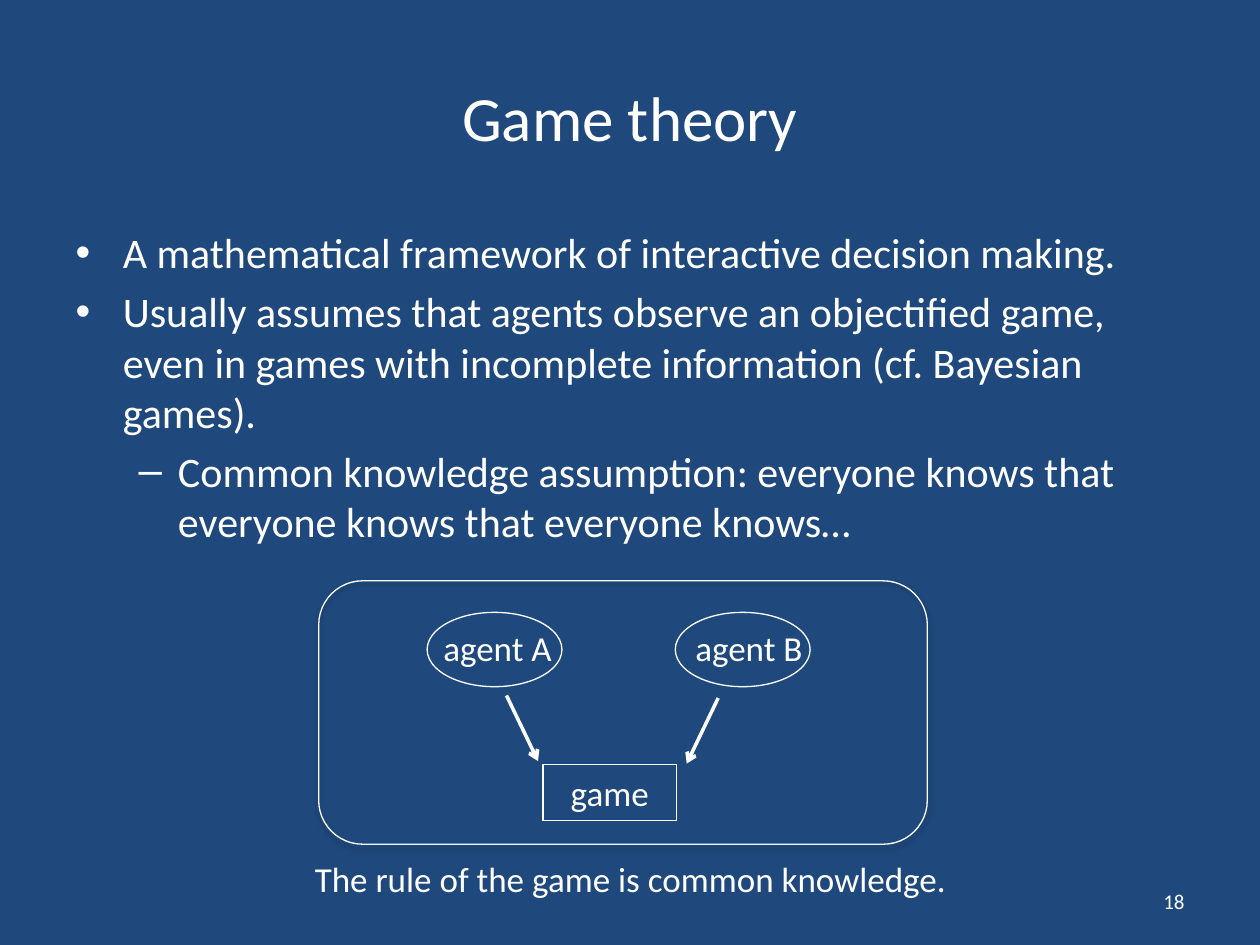
"""Build the game theory slide with its common knowledge diagram."""
from dataclasses import dataclass

from lxml.etree import SubElement
from pptx import Presentation
from pptx.dml.color import RGBColor
from pptx.enum.shapes import MSO_CONNECTOR as Conn, MSO_SHAPE as Shape
from pptx.enum.text import MSO_ANCHOR as Anchor, PP_ALIGN as Align
from pptx.oxml.ns import qn
from pptx.util import Inches, Pt


@dataclass(frozen=True)
class Theme:
    font: str = "Calibri"
    back: RGBColor = RGBColor(0x1F, 0x49, 0x7D)
    ink: RGBColor = RGBColor(0xFF, 0xFF, 0xFF)
    shadow: str = "000000"
    title: Pt = Pt(36)
    body: Pt = Pt(24)
    label: Pt = Pt(20)
    number: Pt = Pt(12)
    outline: Pt = Pt(0.75)
    arrow: Pt = Pt(2)


theme = Theme()


def write(sp, text, size, align=None, level=0, first=True, wrap=True):
    tf = sp.text_frame
    tf.word_wrap = wrap
    p = tf.paragraphs[0] if first else tf.add_paragraph()
    p.text, p.level, p.alignment = text, level, align
    p.font.name, p.font.size = theme.font, size
    p.font.color.rgb = theme.ink


def outline(kind, *box):
    sp = s.shapes.add_shape(kind, *map(Inches, box))
    sp.shadow.inherit = False
    sp.fill.background()
    sp.line.color.rgb = theme.ink
    sp.line.width = theme.outline
    return sp


prs = Presentation()
prs.slide_width, prs.slide_height = Inches(10), Inches(7.5)
s = prs.slides.add_slide(prs.slide_layouts[1])
s.background.fill.solid()
s.background.fill.fore_color.rgb = theme.back

title, body = s.placeholders
for sp, top, height in ((title, 0.3, 1.25), (body, 1.75, 4.95)):
    sp.left, sp.top = Inches(0.5), Inches(top)
    sp.width, sp.height = Inches(9), Inches(height)
title.text_frame.vertical_anchor = Anchor.MIDDLE
write(title, "Game theory", theme.title, Align.CENTER)

points = [
    (0, "A mathematical framework of interactive decision making."),
    (0, "Usually assumes that agents observe an objectified game, "
        "even in games with incomplete information (cf. Bayesian games)."),
    (1, "Common knowledge assumption: everyone knows that "
        "everyone knows that everyone knows…"),
]
for i, (level, text) in enumerate(points):
    write(body, text, theme.body, level=level, first=i == 0)

number = s.shapes.add_textbox(Inches(7.17), Inches(6.95), Inches(2.33), Inches(0.4))
number.text_frame.vertical_anchor = Anchor.MIDDLE
write(number, "18", theme.number, Align.RIGHT)

frame = outline(Shape.ROUNDED_RECTANGLE, 2.53, 4.61, 4.83, 2.09)
effects = frame._element.spPr.find(qn("a:effectLst"))
shadow = SubElement(effects, qn("a:outerShdw"), blurRad=str(Pt(3.1)),
                    dist=str(Pt(1.8)), dir="5400000", rotWithShape="0")
color = SubElement(shadow, qn("a:srgbClr"), val=theme.shadow)
SubElement(color, qn("a:alpha"), val="35000")

for left in (3.39, 5.36):
    outline(Shape.OVAL, left, 4.86, 1.07, 0.59)

game = outline(Shape.RECTANGLE, 4.31, 6.07, 1.06, 0.44)
write(game, "game", theme.label, Align.CENTER)

labels = [
    ("agent A", 3.42, 4.92, 1.07),
    ("agent B", 5.42, 4.92, 1.06),
    ("The rule of the game is common knowledge.", 2.4, 6.76, 5.26),
]
for text, left, top, width in labels:
    tb = s.shapes.add_textbox(Inches(left), Inches(top), Inches(width), Inches(0.44))
    write(tb, text, theme.label, wrap=False)

for ends in ((4.02, 5.52, 4.27, 6.04), (5.7, 5.54, 5.45, 6.06)):
    arrow = s.shapes.add_connector(Conn.STRAIGHT, *map(Inches, ends))
    arrow.line.color.rgb = theme.ink
    arrow.line.width = theme.arrow
    SubElement(arrow.line._get_or_add_ln(), qn("a:tailEnd"), type="arrow")
    SubElement(arrow._element.spPr, qn("a:effectLst"))

prs.save("out.pptx")
